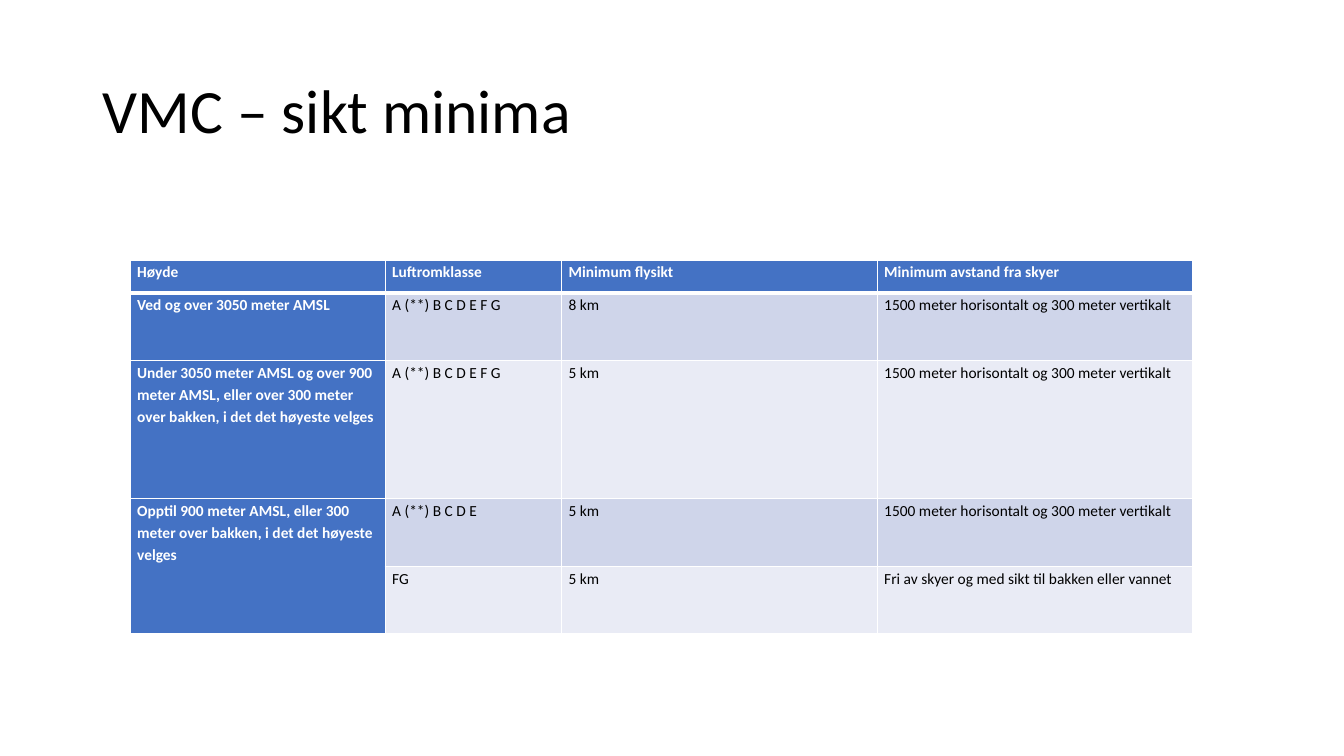
from lxml import etree
from pptx import Presentation
from pptx.dml.color import RGBColor
from pptx.enum import text
from pptx.oxml.ns import qn
from pptx.util import Inches, Pt

FONT = "Calibri"
BLACK = RGBColor(0x00, 0x00, 0x00)
WHITE = RGBColor(0xFF, 0xFF, 0xFF)
BLUE = RGBColor(0x44, 0x72, 0xC4)
BANDS = [RGBColor(0xE9, 0xEB, 0xF5), RGBColor(0xCF, 0xD5, 0xEA)]

COLUMN_WIDTHS = [2.53, 1.75, 3.13, 3.13]
ROW_HEIGHTS = [0.33, 0.67, 1.37, 0.67, 0.67]
CLOUD_DISTANCE = "1500 meter horisontalt og 300 meter vertikalt"
MINIMA = [
    ["Høyde", "Luftromklasse", "Minimum flysikt", "Minimum avstand fra skyer"],
    ["Ved og over 3050 meter AMSL", "A (**) B C D E F G", "8 km", CLOUD_DISTANCE],
    ["Under 3050 meter AMSL og over 900 meter AMSL, eller over 300 meter over bakken, "
     "i det det høyeste velges", "A (**) B C D E F G", "5 km", CLOUD_DISTANCE],
    ["Opptil 900 meter AMSL, eller 300 meter over bakken, i det det høyeste velges",
     "A (**) B C D E", "5 km", CLOUD_DISTANCE],
    ["", "FG", "5 km", "Fri av skyer og med sikt til bakken eller vannet"],
]


def set_title(slide, title):
    sp = slide.shapes.title
    sp.left, sp.top = Inches(0.92), Inches(0.4)
    sp.width, sp.height = Inches(11.5), Inches(1.45)
    tf = sp.text_frame
    tf.text = title
    tf.auto_size = text.MSO_AUTO_SIZE.NONE
    tf.vertical_anchor = text.MSO_ANCHOR.MIDDLE
    p = tf.paragraphs[0]
    p.alignment = text.PP_ALIGN.LEFT
    p.line_spacing = 0.9
    p.font.name, p.font.size = FONT, Pt(44)
    p.font.color.rgb = BLACK


def set_borders(cell, top, bottom):
    """Draw white borders; must run before the fill, which follows them in the XML."""
    tc_pr = cell._tc.get_or_add_tcPr()
    for side, width in (("L", 1), ("R", 1), ("T", top), ("B", bottom)):
        ln = etree.SubElement(tc_pr, qn(f"a:ln{side}"), w=str(Pt(width)))
        fill = etree.SubElement(ln, qn("a:solidFill"))
        etree.SubElement(fill, qn("a:srgbClr"), val=str(WHITE))


def format_cell(cell, content, row, is_heading):
    cell.margin_left = cell.margin_right = Inches(0.07)
    cell.margin_top = cell.margin_bottom = 0
    set_borders(cell, top=3 if row == 1 else 1, bottom=3 if row == 0 else 1)
    cell.fill.solid()
    cell.fill.fore_color.rgb = BLUE if is_heading else BANDS[row % 2]
    p = cell.text_frame.paragraphs[0]
    p.text = content
    p.line_spacing, p.space_after = 1.15, Pt(10)
    p.font.name, p.font.size, p.font.bold = FONT, Pt(11), is_heading
    p.font.color.rgb = WHITE if is_heading else BLACK


def add_minima_table(slide):
    table = slide.shapes.add_table(
        len(MINIMA), len(COLUMN_WIDTHS), Inches(1.29), Inches(2.58),
        Inches(sum(COLUMN_WIDTHS)), Inches(sum(ROW_HEIGHTS))).table
    table.first_col = True
    for column, width in zip(table.columns, COLUMN_WIDTHS):
        column.width = Inches(width)
    for row, height in zip(table.rows, ROW_HEIGHTS):
        row.height = Inches(height)
    for i, contents in enumerate(MINIMA):
        for j, content in enumerate(contents):
            format_cell(table.cell(i, j), content, i, is_heading=i == 0 or j == 0)
    table.cell(3, 0).merge(table.cell(4, 0))


def main():
    prs = Presentation()
    prs.slide_width, prs.slide_height = Inches(13.33), Inches(7.5)
    slide = prs.slides.add_slide(prs.slide_layouts.get_by_name("Title Only"))
    set_title(slide, "VMC – sikt minima")
    add_minima_table(slide)
    prs.save("out.pptx")


if __name__ == "__main__":
    main()
